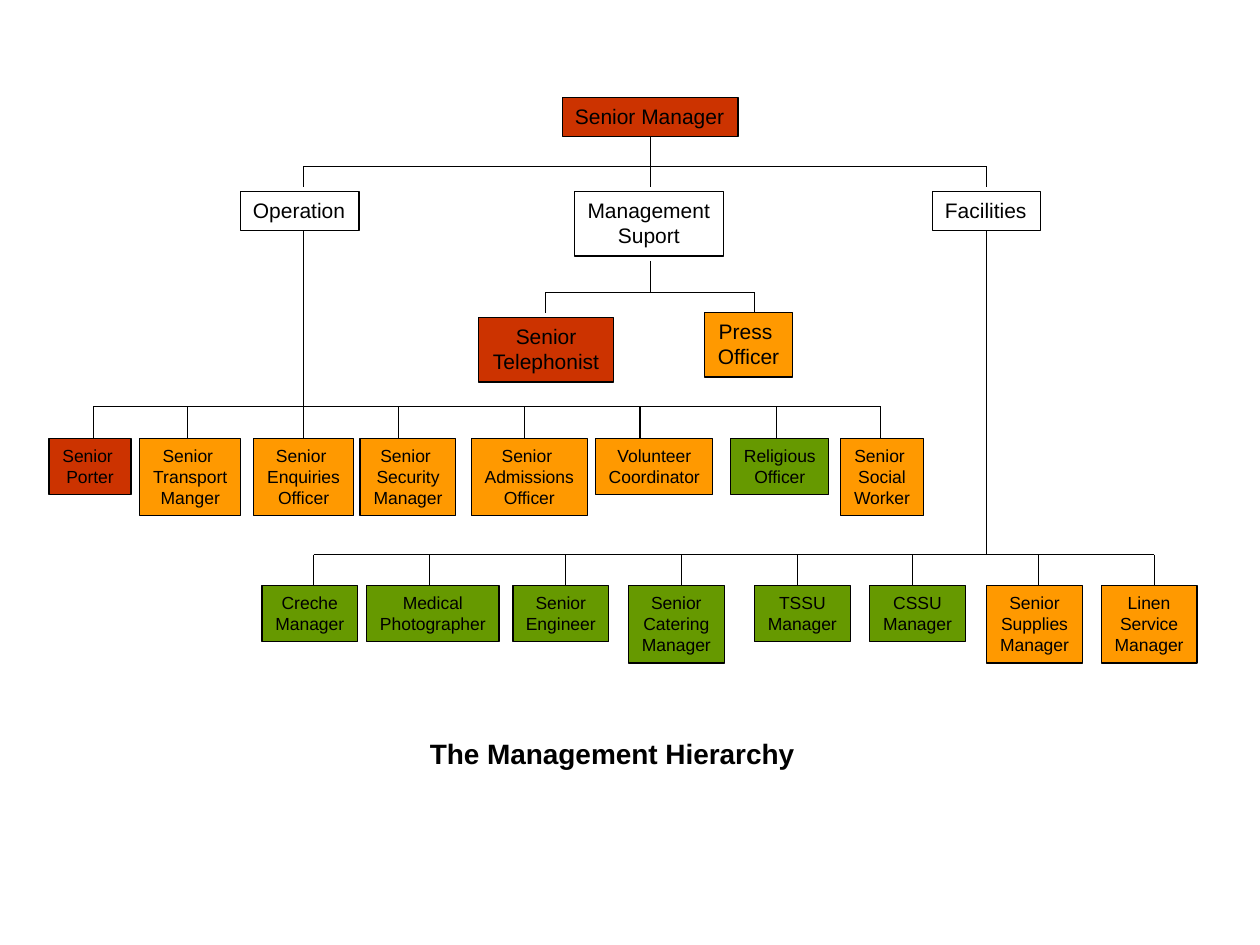
from lxml import etree
from pptx import Presentation
from pptx import util as u
from pptx.dml.color import RGBColor
from pptx.enum import shapes, text
from pptx.oxml.ns import qn

BLACK = RGBColor(0x00, 0x00, 0x00)
RED = RGBColor(0xCC, 0x33, 0x00)
ORANGE = RGBColor(0xFF, 0x99, 0x00)
GREEN = RGBColor(0x66, 0x99, 0x00)

TOP, BOTTOM = 0, 2
CENTRED_WITHIN = u.Cm(0.02)

OPERATION_STAFF = [
    ("Senior \nPorter", 0.99, 1.65, RED, 1.88),
    ("Senior \nTransport\nManger", 2.82, 2.03, ORANGE, 3.78),
    ("Senior \nEnquiries\nOfficer", 5.11, 2.02, ORANGE, 6.12),
    ("Senior \nSecurity\nManager", 7.26, 1.93, ORANGE, 8.03),
    ("Senior \nAdmissions\nOfficer", 9.5, 2.34, ORANGE, 10.57),
    ("Volunteer\nCoordinator", 12.01, 2.36, ORANGE, 12.9),
    ("Religious\nOfficer", 14.73, 1.98, GREEN, 15.65),
    ("Senior \nSocial\nWorker", 16.94, 1.68, ORANGE, 17.75),
]
FACILITIES_STAFF = [
    ("Creche\nManager", 5.28, 1.93, GREEN, 6.32),
    ("Medical\nPhotographer", 7.39, 2.67, GREEN, 8.66),
    ("Senior\nEngineer", 10.34, 1.93, GREEN, 11.4),
    ("Senior\nCatering\nManager", 12.67, 1.93, GREEN, 13.74),
    ("TSSU\nManager", 15.21, 1.93, GREEN, 16.08),
    ("CSSU\nManager", 17.53, 1.93, GREEN, 18.39),
    ("Senior\nSupplies\nManager", 19.89, 1.93, ORANGE, 20.93),
    ("Linen\nService\nManager", 22.2, 1.93, ORANGE, 23.27),
]


def format_text(tf, size, align, bold=False):
    tf.word_wrap = False
    tf.auto_size = text.MSO_AUTO_SIZE.SHAPE_TO_FIT_TEXT
    tf.vertical_anchor = text.MSO_ANCHOR.TOP
    for p in tf.paragraphs:
        p.alignment = align
        for r in p.runs:
            r.font.name = "Arial"
            r.font.size = u.Pt(size)
            r.font.bold = bold
            r.font.color.rgb = BLACK


def add_post(s, label, left, top, width, fill=None, size=12):
    lines = label.count("\n") + 1
    height = 0.28 + 0.0425 * size * lines
    sp = s.shapes.add_shape(shapes.MSO_SHAPE.RECTANGLE,
                            u.Cm(left), u.Cm(top), u.Cm(width), u.Cm(height))
    sp.shadow.inherit = False
    if fill is None:
        sp.fill.background()
    else:
        sp.fill.solid()
        sp.fill.fore_color.rgb = fill
    sp.line.color.rgb = BLACK
    sp.line.width = u.Pt(0.75)
    sp.text_frame.text = label
    align = text.PP_ALIGN.CENTER if lines > 1 else text.PP_ALIGN.LEFT
    format_text(sp.text_frame, size, align)
    return sp


def add_line(s, x1, y1, x2, y2):
    line = s.shapes.add_connector(shapes.MSO_CONNECTOR.STRAIGHT,
                                  u.Cm(x1), u.Cm(y1), u.Cm(x2), u.Cm(y2))
    line.line.color.rgb = BLACK
    line.line.width = u.Pt(0.75)
    etree.SubElement(line._element.spPr, qn("a:effectLst"))
    return line


def is_centred(sp, x):
    return abs(sp.left + sp.width / 2 - u.Cm(x)) <= CENTRED_WITHIN


def add_trunk(s, x, top, bottom, parent=None):
    line = add_line(s, x, top, x, bottom)
    if parent is not None and is_centred(parent, x):
        line.begin_connect(parent, BOTTOM)


def add_branches(s, xs, bar, bottom):
    add_line(s, xs[0], bar, xs[-1], bar)
    return [add_line(s, x, bar, x, bottom) for x in xs]


def add_staff_row(s, staff, bar, top):
    drops = add_branches(s, [post[-1] for post in staff], bar, top)
    for drop, (label, left, width, fill, x) in zip(drops, staff):
        sp = add_post(s, label, left, top, width, fill, size=10)
        if is_centred(sp, x):
            drop.end_connect(sp, TOP)


def add_title(s, label):
    sp = s.shapes.title
    sp.left, sp.top = u.Cm(8.41), u.Cm(14.73)
    sp.width, sp.height = u.Cm(7.87), u.Cm(0.94)
    sp.text_frame.text = label
    format_text(sp.text_frame, 16, text.PP_ALIGN.LEFT, bold=True)


def main():
    prs = Presentation()
    prs.slide_width, prs.slide_height = u.Cm(25.4), u.Cm(19.05)
    s = prs.slides.add_slide(prs.slide_layouts[5])
    add_title(s, "The Management Hierarchy")

    manager = add_post(s, "Senior Manager", 11.34, 1.96, 3.54, RED)
    operation = add_post(s, "Operation", 4.85, 3.86, 2.39)
    add_post(s, "Management\nSuport", 11.58, 3.86, 3)
    facilities = add_post(s, "Facilities", 18.8, 3.86, 2.18)
    add_post(s, "Senior\nTelephonist", 9.65, 6.4, 2.72, RED)
    add_post(s, "Press \nOfficer", 14.2, 6.3, 1.78, ORANGE)

    add_trunk(s, 13.11, 2.75, 3.76, manager)
    add_branches(s, [6.12, 19.89], 3.35, 3.76)
    add_trunk(s, 13.11, 5.26, 5.89)
    add_branches(s, [11, 15.21], 5.89, 6.3)

    add_trunk(s, 6.12, 4.65, 8.2, operation)
    add_staff_row(s, OPERATION_STAFF, 8.2, 8.84)
    add_trunk(s, 19.89, 4.65, 11.18, facilities)
    add_staff_row(s, FACILITIES_STAFF, 11.18, 11.81)

    prs.save("out.pptx")


if __name__ == "__main__":
    main()
